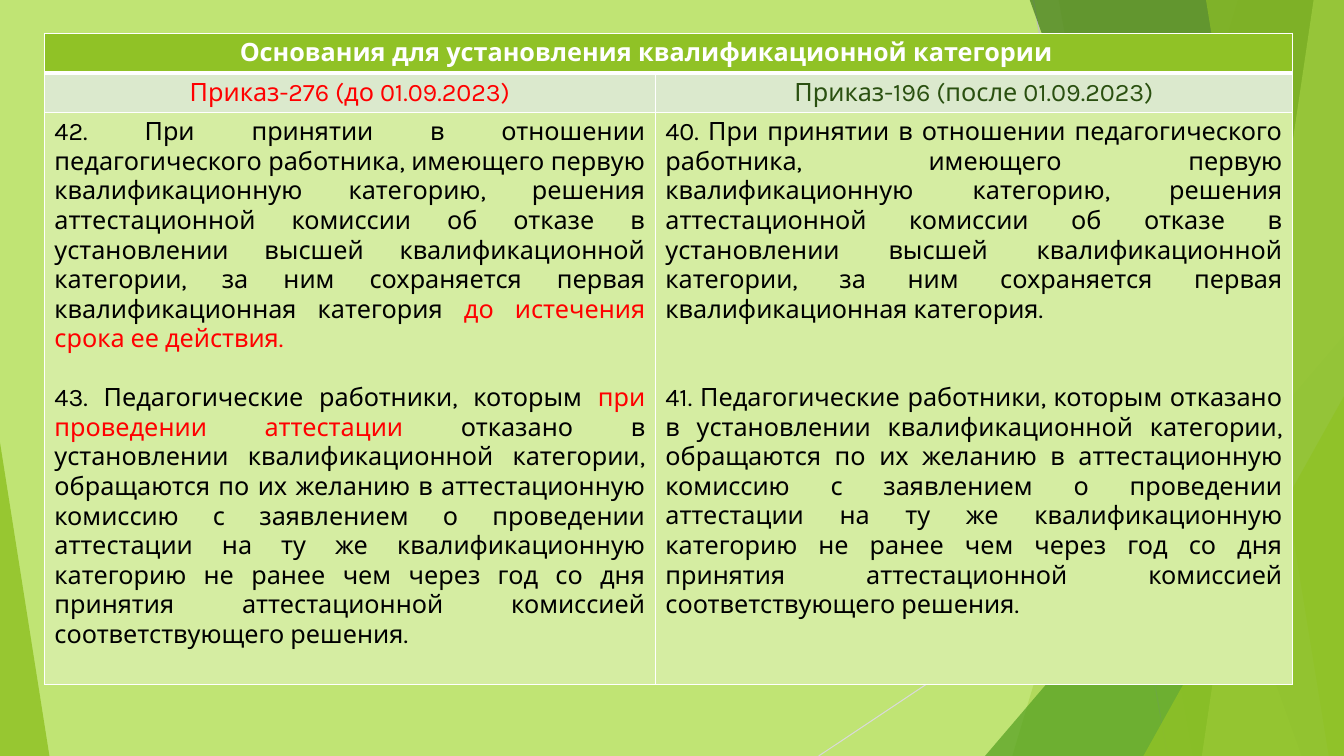
import pptx
import pptx.util
import pptx.dml.color
import pptx.enum.shapes
import pptx.enum.text
import pptx.oxml
import pptx.oxml.ns

Inches = pptx.util.Inches
Pt = pptx.util.Pt
ALIGN = pptx.enum.text.PP_ALIGN
SHAPE = pptx.enum.shapes.MSO_SHAPE
WIDE, HIGH = 13.33, 7.5
LIME, PALE, GREEN, DARK = "90C226", "C0E474", "54A021", "3F7819"
RED, BLACK, WHITE = "FF0000", "000000", "FFFFFF"
BODY = "D5EDA2"

REFUSAL = (" При принятии в отношении педагогического работника, имеющего первую "
           "квалификационную категорию, решения аттестационной комиссии об отказе в "
           "установлении высшей квалификационной категории, за ним сохраняется первая "
           "квалификационная категория")
STAFF = " Педагогические работники, которым "
APPEAL = ("отказано в установлении квалификационной категории, обращаются по их желанию "
          "в аттестационную комиссию с заявлением о проведении аттестации на ту же "
          "квалификационную категорию не ранее чем через год со дня принятия "
          "аттестационной комиссией соответствующего решения.")


def color(code):
    return pptx.dml.color.RGBColor.from_string(code)


def xml(parent, tag, **attrs):
    node = pptx.oxml.ns.qn(tag)
    child = parent.makeelement(node, {k: str(v) for k, v in attrs.items()})
    parent.append(child)
    return child


def paint(shape, code, alpha):
    """Fill a shape with a see-through colour and no outline."""
    shape.shadow.inherit = False
    shape.line.fill.background()
    shape.fill.solid()
    shape.fill.fore_color.rgb = color(code)
    tint = shape.fill._xPr.find(".//" + pptx.oxml.ns.qn("a:srgbClr"))
    xml(tint, "a:alpha", val=alpha * 1000)


def line(slide, start, end, code):
    link = slide.shapes.add_connector(
        pptx.enum.shapes.MSO_CONNECTOR.STRAIGHT, *map(Inches, start + end))
    link.line.color.rgb = color(code)
    link.line.width = Pt(0.75)
    xml(link._element.spPr, "a:effectLst")


def band(slide, top, foot, code, alpha):
    """Draw a slanted band from its left edge to the slide's right edge."""
    points = [(top, -0.01), (WIDE, -0.01), (WIDE, HIGH), (foot, HIGH)]
    points = [(Inches(x), Inches(y)) for x, y in points]
    build = slide.shapes.build_freeform(*points[0])
    build.add_line_segments(points[1:], close=True)
    paint(build.convert_to_shape(), code, alpha)


def wedge(slide, left, top, width, peak, code, alpha):
    """Draw a triangle that stands on the slide's lower edge."""
    shape = slide.shapes.add_shape(
        SHAPE.ISOSCELES_TRIANGLE, Inches(left), Inches(top),
        Inches(width), Inches(HIGH - top))
    shape.adjustments[0] = peak
    paint(shape, code, alpha)


def decor(slide):
    line(slide, (10.25, 0), (11.58, HIGH), "BFBFBF")
    line(slide, (WIDE, 4.03), (8.12, HIGH), "D9D9D9")
    band(slide, 12.28, 10.04, LIME, 30)
    band(slide, 10.5, 11.83, LIME, 20)
    wedge(slide, 9.77, 3.33, WIDE - 9.77, 1, GREEN, 72)
    band(slide, 10.21, 12.91, DARK, 70)
    band(slide, 13.03, 11.92, PALE, 70)
    band(slide, 11.96, 13.18, LIME, 65)
    wedge(slide, 11.34, 3.93, WIDE - 11.34, 1, LIME, 80)
    wedge(slide, 0, 4.39, 0.49, 0, LIME, 85)


def write(par, runs, align=ALIGN.CENTER, bold=False, gap=0):
    """Put (text, colour) runs into a paragraph."""
    par.alignment = align
    par.space_before = Pt(gap)
    for text, code in runs:
        run = par.add_run()
        run.text = text
        run.font.name = "Karla"
        run.font.size = Pt(18)
        run.font.bold = bold
        run.font.color.rgb = color(code)


def style(cell, fill, top=1, foot=1):
    """Give a cell white borders and a fill."""
    props = cell._tc.get_or_add_tcPr()
    for side, width in (("L", 1), ("R", 1), ("T", top), ("B", foot)):
        edge = xml(props, "a:ln" + side, w=Pt(width))
        xml(xml(edge, "a:solidFill"), "a:srgbClr", val=WHITE)
    cell.fill.solid()
    cell.fill.fore_color.rgb = color(fill)


def clauses(cell, first, second, gap):
    frame = cell.text_frame
    write(frame.paragraphs[0], first, align=ALIGN.JUSTIFY)
    write(frame.add_paragraph(), second, align=ALIGN.JUSTIFY, gap=gap)


def compare(slide, left, top, cols, rows):
    """Build the table that sets the two orders side by side."""
    table = slide.shapes.add_table(
        len(rows), len(cols), Inches(left), Inches(top),
        Inches(sum(cols)), Inches(sum(rows))).table
    for col, width in zip(table.columns, cols):
        col.width = Inches(width)
    for row, height in zip(table.rows, rows):
        row.height = Inches(height)
    looks = [(LIME, 1, 3), ("DBE9CD", 3, 1), (BODY, 1, 1)]
    for row, look in zip(table.rows, looks):
        for cell in row.cells:
            style(cell, *look)

    title = table.cell(0, 0)
    title.merge(table.cell(0, 1))
    title.margin_right = Inches(0.54)
    write(title.text_frame.paragraphs[0],
          [("Основания для установления квалификационной категории", WHITE)], bold=True)
    heads = [("Приказ-276 (до 01.09.2023)", RED),
             ("Приказ-196 (после 01.09.2023)", "2A5010")]
    for i, head in enumerate(heads):
        write(table.cell(1, i).text_frame.paragraphs[0], [head])

    clauses(table.cell(2, 0),
            [("42." + REFUSAL + " ", BLACK), ("до истечения срока ее действия.", RED)],
            [("43." + STAFF, BLACK), ("при проведении аттестации", RED),
             (" " + APPEAL, BLACK)], gap=21)
    clauses(table.cell(2, 1),
            [("40." + REFUSAL + ".", BLACK)],
            [("41." + STAFF + APPEAL, BLACK)], gap=42)


def main():
    deck = pptx.Presentation()
    deck.slide_width, deck.slide_height = Inches(WIDE), Inches(HIGH)
    slide = deck.slides.add_slide(deck.slide_layouts[6])
    back = slide.background.fill
    back.solid()
    back.fore_color.rgb = color(PALE)
    decor(slide)
    compare(slide, 0.44, 0.33, cols=[6.06, 6.32], rows=[0.39, 0.39, 5.67])
    deck.save("out.pptx")


if __name__ == "__main__":
    main()
